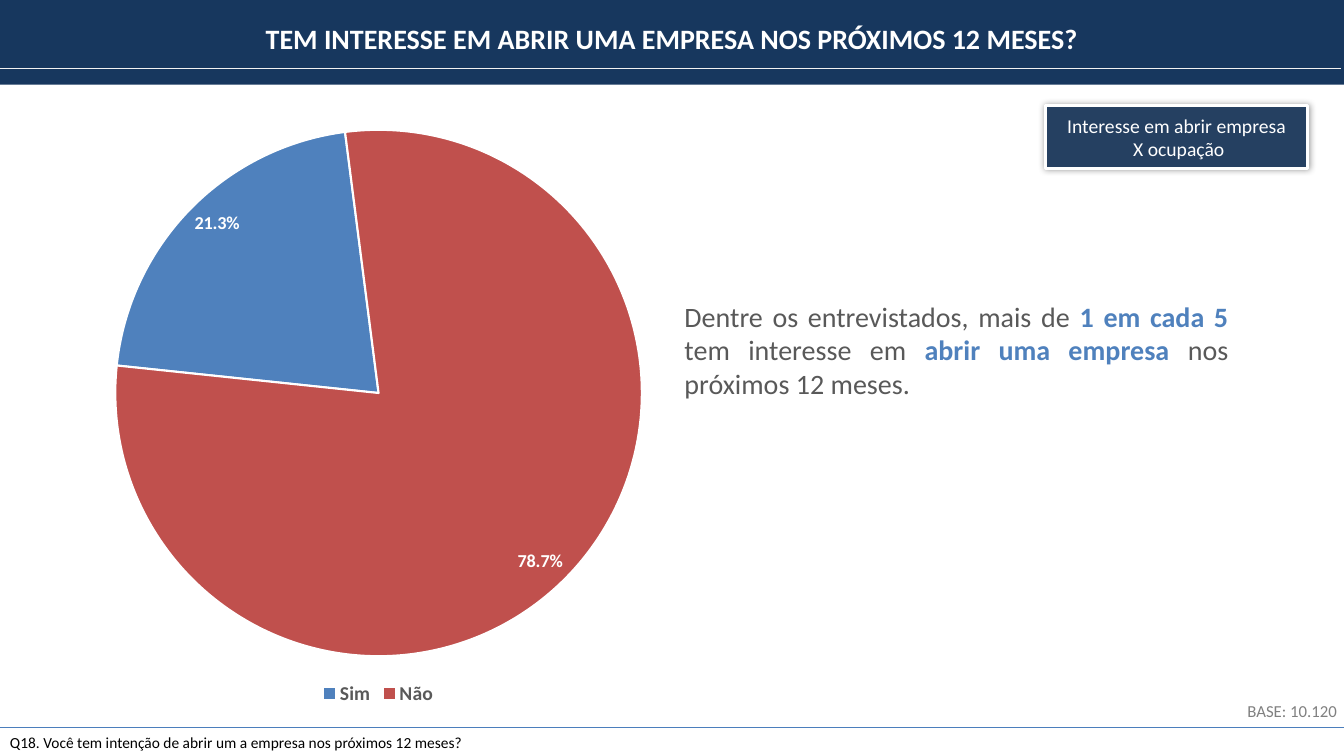
import pptx
import pptx.chart.data
import pptx.dml.color
import pptx.enum.chart
import pptx.enum.shapes
import pptx.enum.text
import pptx.oxml
import pptx.oxml.ns
import pptx.util

Inches = pptx.util.Inches
Pt = pptx.util.Pt
ALIGN = pptx.enum.text.PP_ALIGN
FONT = "Calibri"
NAVY, BLUE, RED, GREY, WHITE = "17375E", "4F81BD", "C0504D", "595959", "FFFFFF"
NS = pptx.oxml.ns.nsdecls("a")
GLOW = (f'<a:effectLst {NS}><a:outerShdw blurRad="63500" dist="0" dir="0">'
        '<a:srgbClr val="000000"><a:alpha val="40000"/></a:srgbClr>'
        '</a:outerShdw></a:effectLst>')


def rgb(color):
    """Turn a hex string into a colour."""
    return pptx.dml.color.RGBColor.from_string(color)


def set_font(font, size, color, bold=False):
    """Set typeface, size, colour and weight."""
    font.name, font.size, font.bold = FONT, Pt(size), bold
    font.color.rgb = rgb(color)


def add_rect(slide, box, fill):
    """Add a plain filled rectangle."""
    sp = slide.shapes.add_shape(pptx.enum.shapes.MSO_SHAPE.RECTANGLE, *map(Inches, box))
    sp.shadow.inherit = False
    sp.fill.solid()
    sp.fill.fore_color.rgb = rgb(fill)
    sp.line.fill.background()
    return sp


def add_text(slide, box, text, size, color, align=ALIGN.LEFT, bold=False):
    """Add a one-paragraph text box."""
    tf = slide.shapes.add_textbox(*map(Inches, box)).text_frame
    tf.word_wrap = True
    p = tf.paragraphs[0]
    p.text, p.alignment = text, align
    set_font(p.font, size, color, bold)


def add_rule(slide, left, top, width, color, weight):
    """Add a horizontal line."""
    line = slide.shapes.add_connector(
        pptx.enum.shapes.MSO_CONNECTOR.STRAIGHT,
        Inches(left), Inches(top), Inches(left + width), Inches(top))
    line.line.color.rgb = rgb(color)
    line.line.width = Pt(weight)
    line._element.spPr.append(pptx.oxml.parse_xml(f"<a:effectLst {NS}/>"))


def add_header(slide, box):
    """Place the title band with its rule."""
    left, top, width, height = box
    add_rect(slide, box, NAVY)
    add_text(slide, (left, top + 0.16, width, 0.44),
             "TEM INTERESSE EM ABRIR UMA EMPRESA NOS PRÓXIMOS 12 MESES?",
             20, WHITE, ALIGN.CENTER, True)
    add_rule(slide, left - 0.03, top + 0.68, width, "F2F2F2", 1)


def add_interest_pie(slide, box):
    """Place the pie of yes and no answers."""
    data = pptx.chart.data.CategoryChartData(number_format="0.0%")
    data.categories = ["Sim", "Não"]
    data.add_series("Series 1", (0.213, 0.787))
    chart = slide.shapes.add_chart(
        pptx.enum.chart.XL_CHART_TYPE.PIE, *map(Inches, box), data).chart
    set_font(chart.font, 10, "000000")
    chart.has_title = False
    chart.has_legend = True
    chart.legend.position = pptx.enum.chart.XL_LEGEND_POSITION.BOTTOM
    chart.legend.include_in_layout = False
    set_font(chart.legend.font, 14, GREY, True)
    plot = chart.plots[0]
    plot.vary_by_categories = True
    for i, color in enumerate((BLUE, RED)):
        fmt = plot.series[0].points[i].format
        fmt.fill.solid()
        fmt.fill.fore_color.rgb = rgb(color)
        fmt.line.color.rgb = rgb(WHITE)
        fmt.line.width = Pt(1.5)
    labels = plot.series[0].data_labels
    labels.show_value = True
    labels.show_percentage = False
    labels.number_format, labels.number_format_is_linked = "0.0%", False
    labels.position = pptx.enum.chart.XL_LABEL_POSITION.INSIDE_END
    set_font(labels.font, 13, WHITE, True)
    angle = pptx.oxml.parse_xml(
        f'<c:firstSliceAng {pptx.oxml.ns.nsdecls("c")} val="276"/>')
    pie = plot._element
    for old in pie.findall(pptx.oxml.ns.qn("c:firstSliceAng")):
        pie.remove(old)
    pie.append(angle)


def add_footer(slide, box):
    """Place the question, the base and the rule above the question."""
    left, top, width, height = box
    add_rule(slide, left, top, width, "4B7EBC", 0.75)
    add_text(slide, (left, top, width / 2, height),
             "Q18. Você tem intenção de abrir um a empresa nos próximos 12 meses?",
             11, "000000")
    add_text(slide, (left + 11.08, top - 0.32, 2.28, 0.3), "BASE: 10.120",
             12, "808080", ALIGN.RIGHT)


def add_crossing_tag(slide, box):
    """Place the framed tag naming the crossing."""
    sp = add_rect(slide, box, "254061")
    sp.line.color.rgb = rgb(WHITE)
    sp.line.width = Pt(2)
    spPr = sp._element.spPr
    spPr.remove(spPr.find(pptx.oxml.ns.qn("a:effectLst")))
    spPr.append(pptx.oxml.parse_xml(GLOW))
    tf = sp.text_frame
    tf.vertical_anchor = pptx.enum.text.MSO_ANCHOR.MIDDLE
    tf.text = "Interesse em abrir empresa\n X ocupação"
    for p in tf.paragraphs:
        p.alignment = ALIGN.CENTER
        set_font(p.font, 14, WHITE)


def add_finding(slide, box):
    """Place the justified finding with its highlights."""
    tf = add_rect(slide, box, WHITE).text_frame
    tf.vertical_anchor = pptx.enum.text.MSO_ANCHOR.TOP
    p = tf.paragraphs[0]
    p.alignment = ALIGN.JUSTIFY
    for text, strong in (("Dentre os entrevistados, mais de ", False),
                         ("1 em cada 5 ", True),
                         ("tem interesse em ", False),
                         ("abrir uma empresa ", True),
                         ("nos próximos 12 meses.", False)):
        r = p.add_run()
        r.text = text
        set_font(r.font, 20, BLUE if strong else GREY, strong)


def main():
    """Build and save the slide."""
    prs = pptx.Presentation()
    prs.slide_width, prs.slide_height = Inches(13.33), Inches(7.5)
    slide = prs.slides.add_slide(prs.slide_layouts[6])
    add_header(slide, (0, 0, 13.33, 0.84))
    add_interest_pie(slide, (0.37, 1.15, 6.77, 5.89))
    add_footer(slide, (0, 7.22, 13.33, 0.29))
    add_crossing_tag(slide, (10.37, 1.05, 2.6, 0.62))
    add_finding(slide, (6.69, 2.92, 5.59, 1.11))
    prs.save("out.pptx")


if __name__ == "__main__":
    main()
